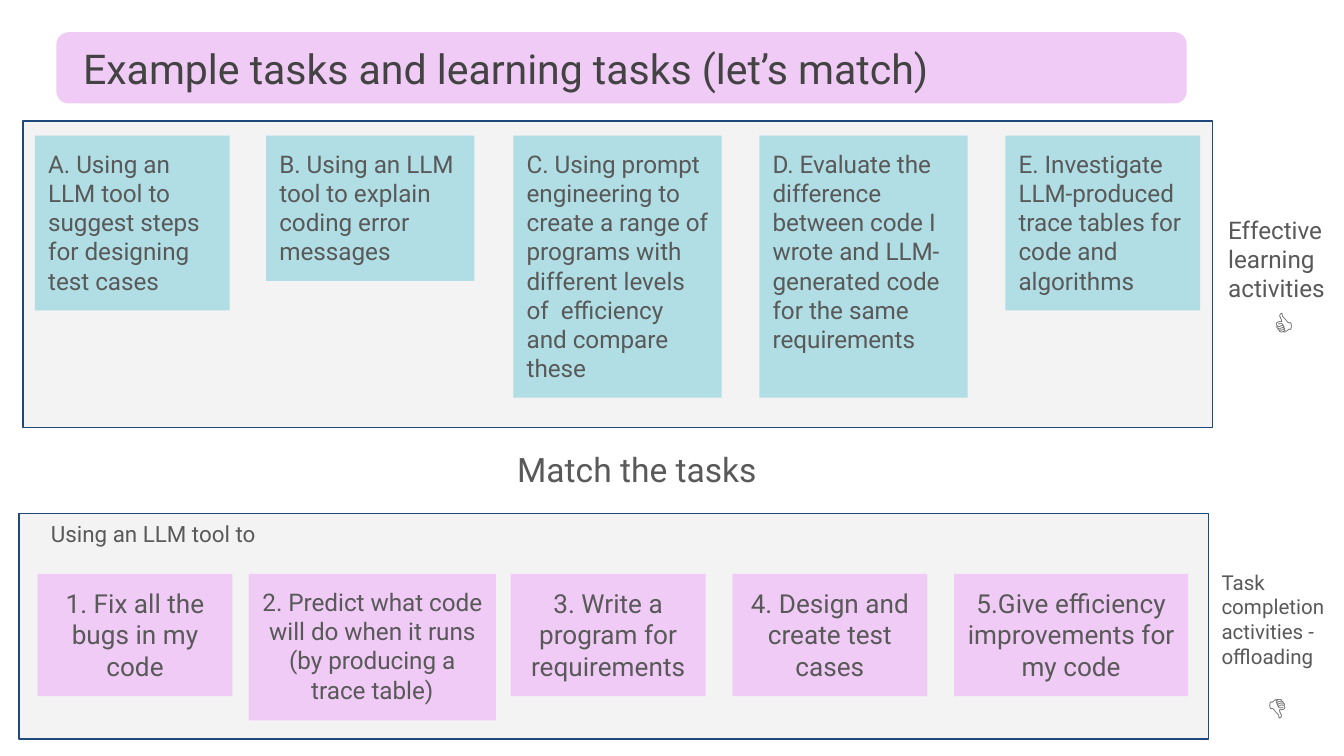
from pptx import Presentation
from pptx.dml.color import RGBColor
from pptx.enum import shapes, text
from pptx.util import Inches, Pt

PINK, TEAL, PANEL, NAVY = "EFCBF5", "B0DEE4", "F3F3F3", "1F497D"
LEFT, CENTER, RIGHT = text.PP_ALIGN.LEFT, text.PP_ALIGN.CENTER, text.PP_ALIGN.RIGHT

prs = Presentation()
prs.slide_width, prs.slide_height = Inches(10), Inches(10 * 9 / 16)
slide = prs.slides.add_slide(prs.slide_layouts[6])


def add_block(x, y, w, h, fill, line=None, kind=shapes.MSO_SHAPE.RECTANGLE):
    block = slide.shapes.add_shape(kind, Inches(x), Inches(y), Inches(w), Inches(h))
    block.shadow.inherit = False
    block.fill.solid()
    block.fill.fore_color.rgb = RGBColor.from_string(fill)
    if line:
        block.line.color.rgb = RGBColor.from_string(line)
        block.line.width = Pt(0.75)
    else:
        block.line.fill.background()
    return block


def add_text(words, x, y, w, h, size=13, color="595959", align=LEFT, fill=None,
             anchor=text.MSO_ANCHOR.TOP, inset=0.1, spacing=None):
    """Write words in a filled card, or in a plain text box when there is no fill."""
    if fill:
        box = add_block(x, y, w, h, fill)
    else:
        box = slide.shapes.add_textbox(Inches(x), Inches(y), Inches(w), Inches(h))
    frame = box.text_frame
    frame.word_wrap = True
    frame.vertical_anchor = anchor
    frame.margin_left = frame.margin_right = Inches(0.1)
    frame.margin_top = frame.margin_bottom = Inches(inset)
    paragraph = frame.paragraphs[0]
    paragraph.alignment = align
    paragraph.line_spacing = spacing
    run = paragraph.add_run()
    run.text = words
    run.font.name = "Roboto"
    run.font.size = Pt(size)
    run.font.color.rgb = RGBColor.from_string(color)


# Title banner
banner = add_block(0.42, 0.24, 8.41, 0.53, PINK, kind=shapes.MSO_SHAPE.ROUNDED_RECTANGLE)
banner.adjustments[0] = 0.17
add_text("Example tasks and learning tasks (let’s match)", 0.52, 0.23, 8.41, 0.5,
         size=22, color="434343", anchor=text.MSO_ANCHOR.MIDDLE, inset=0.05, spacing=1.15)

# Effective learning activities
add_block(0.17, 0.9, 8.85, 2.28, PANEL, NAVY)
learning_tasks = [
    ("A. Using an LLM tool to suggest steps for designing test cases", 0.26, 1.45, 1.3),
    ("B. Using an LLM tool to explain coding error messages", 1.98, 1.55, 1.08),
    ("C. Using prompt engineering to create a range of programs with different levels "
     "of  efficiency and compare these", 3.82, 1.55, 1.95),
    ("D. Evaluate the difference between code I wrote and LLM-generated code "
     "for the same requirements", 5.65, 1.55, 1.95),
    ("E. Investigate LLM-produced trace tables for code and algorithms", 7.48, 1.45, 1.3),
]
for task, x, width, height in learning_tasks:
    add_text(task, x, 1.01, width, height, fill=TEAL)
add_text("Effective learning activities", 9.04, 1.5, 1.01, 1.06)
add_text("👍", 9.28, 2.17, 0.45, 0.48, size=16.8, align=RIGHT)

add_text("Match the tasks", 3.75, 3.24, 2.26, 0.5, size=18)

# Task completion activities
add_block(0.14, 3.82, 8.85, 1.68, PANEL, NAVY)
add_text("Using an LLM tool to", 0.28, 3.77, 2.55, 0.4, size=12)
completion_tasks = [
    ("1. Fix all the bugs in my code", 0.28, 1.45, 0.91, 14),
    ("2. Predict what code will do when it runs (by producing a trace table)",
     1.85, 1.84, 1.09, 13),
    ("3. Write a program for requirements", 3.8, 1.45, 0.91, 14),
    ("4. Design and create test cases", 5.45, 1.45, 0.91, 14),
    ("5.Give efficiency improvements for my code", 7.1, 1.74, 0.91, 14),
]
for task, x, width, height, size in completion_tasks:
    add_text(task, x, 4.27, width, height, size=size, align=CENTER, fill=PINK)
add_text("Task completion activities - offloading", 8.99, 4.14, 1.01, 0.94, size=11)
add_text("👎", 9.19, 5.01, 0.49, 0.48, size=16.8, align=RIGHT)

prs.save("out.pptx")
